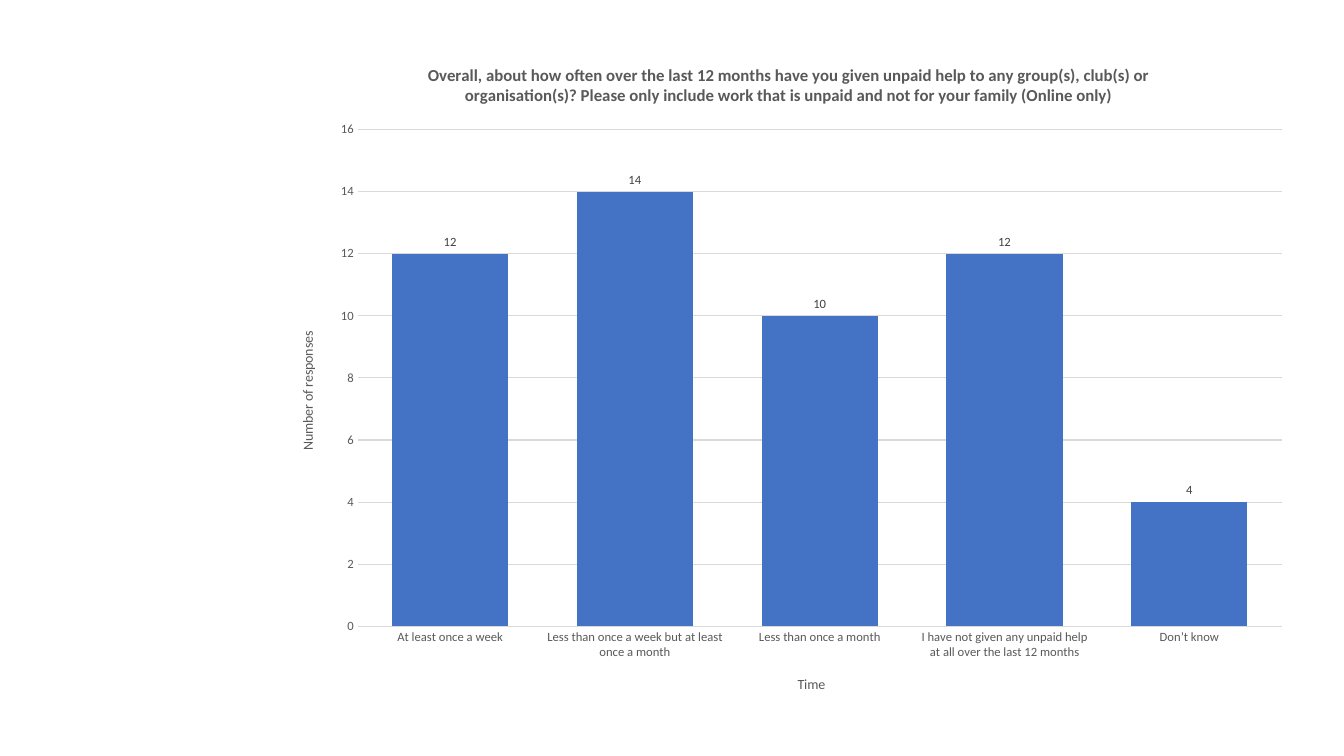
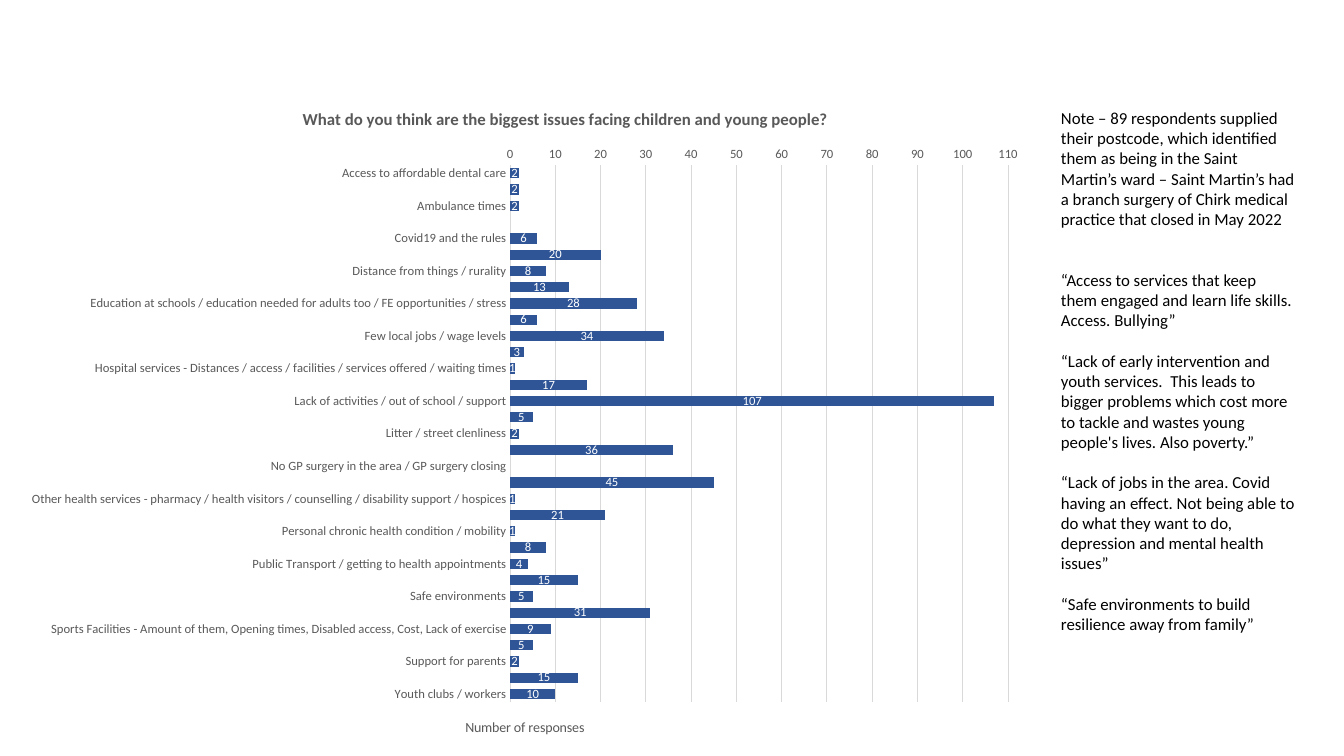
from dataclasses import dataclass

from lxml.etree import SubElement
from pptx import Presentation
from pptx.chart.data import CategoryChartData
from pptx.dml.color import RGBColor
from pptx.enum.chart import XL_CHART_TYPE, XL_LABEL_POSITION, XL_TICK_MARK
from pptx.oxml.ns import qn
from pptx.util import Inches, Pt


@dataclass(frozen=True)
class Theme:
    font: str = "Calibri"
    ink: str = "000000"
    muted: str = "595959"
    grid: str = "D9D9D9"
    column: str = "4472C4"
    column_label: str = "404040"
    bar: str = "2F5597"
    bar_label: str = "FFFFFF"
    title_size: int = 12
    body_size: int = 12
    axis_title_size: int = 10
    tick_size: int = 9
    hairline: float = 0.75
    line_pitch: float = 14.65


CHART_SIZE = (76.4, 88.8)

FREQUENCY_TITLE = (
    "Overall, about how often over the last 12 months have you given unpaid help "
    "to any group(s), club(s) or organisation(s)? Please only include work that is "
    "unpaid and not for your family (Online only)"
)
FREQUENCY = {
    "At least once a week": 12,
    "Less than once a week but at least once a month": 14,
    "Less than once a month": 10,
    "I have not given any unpaid help at all over the last 12 months": 12,
    "Don’t know": 4,
}

ISSUES_TITLE = "What do you think are the biggest issues facing children and young people?"
ISSUES = {
    "Access to affordable dental care": 2,
    "Access to gp for appointments / no face to face / not enough GPs": 2,
    "Ambulance times": 2,
    "Communication between organisations / continuity / cross border": None,
    "Covid19 and the rules": 6,
    "Crime, Antisocial behaviour and Vandalism / Police numbers": 20,
    "Distance from things / rurality": 8,
    "Drugs": 13,
    "Education at schools / education needed for adults too / FE opportunities / stress": 28,
    "Engagement / language": 6,
    "Few local jobs / wage levels": 34,
    "Healthcare in general / in area / funding": 3,
    "Hospital services - Distances / access / facilities / services offered / waiting times": 1,
    "Housing - lack of affordable ones / too many developments": 17,
    "Lack of activities / out of school / support": 107,
    "Lifestyle issues - Diets / Obesity / Amount of takeaways / Smoking / Alcohol": 5,
    "Litter / street clenliness": 2,
    "Mental health / social media pressure / isolation / lonliness / lack of MH services / bullying": 36,
    "No GP surgery in the area / GP surgery closing": None,
    "Nothing / not sure": 45,
    "Other health services - pharmacy / health visitors / counselling / disability support / hospices": 1,
    "People's attitude / parental / personal responsibilities": 21,
    "Personal chronic health condition / mobility": 1,
    "Pollution from local business / traffic": 8,
    "Public Transport / getting to health appointments": 4,
    "Rising costs or living": 15,
    "Safe environments": 5,
    "Screen time - too much / the internet / access / social media": 31,
    "Sports Facilities - Amount of them, Opening times, Disabled access, Cost, Lack of exercise": 9,
    "State of Local Infrastructure now and in future - Cycle routes, Roads, Pavements, "
    "Street lighting and Parks / schools": 5,
    "Support for parents": 2,
    "The Future - worries / prospects": 15,
    "Youth clubs / workers": 10,
}

COMMENTS = [
    (0, "Note – 89 respondents supplied their postcode, which identified them as being in "
        "the Saint Martin’s ward – Saint Martin’s had a branch surgery of Chirk medical "
        "practice that closed in May 2022"),
    (2, "“Access to services that keep them engaged and learn life skills. Access. Bullying”"),
    (1, "“Lack of early intervention and youth services.  This leads to bigger problems which "
        "cost more to tackle and wastes young people's lives. Also poverty.”"),
    (1, "“Lack of jobs in the area. Covid having an effect. Not being able to do what they "
        "want to do, depression and mental health issues”"),
    (1, "“Safe environments to build resilience away from family”"),
]


class SurveyDeck:
    def __init__(self, theme):
        self.theme = theme
        self.deck = Presentation()
        self.deck.slide_width = Inches(13.33)
        self.deck.slide_height = Inches(7.5)
        self.slide = None

    def add_slide(self):
        self.slide = self.deck.slides.add_slide(self.deck.slide_layouts[6])

    def area(self, left, top, width, height):
        across, down = self.deck.slide_width / 100, self.deck.slide_height / 100
        return [int(length) for length in
                (left * across, top * down, width * across, height * down)]

    def style_font(self, font, size, color, bold=False):
        font.name = self.theme.font
        font.size = Pt(size)
        font.bold = bold
        font.color.rgb = RGBColor.from_string(color)

    def style_line(self, line):
        line.color.rgb = RGBColor.from_string(self.theme.grid)
        line.width = Pt(self.theme.hairline)

    def set_title(self, owner, text, size, bold=False):
        frame = owner.text_frame
        frame.text = text
        for span in frame.paragraphs[0].runs:
            self.style_font(span.font, size, self.theme.muted, bold)

    def set_layout(self, element, position, after=None, inner=False):
        for layout in element.findall(qn("c:layout")):
            element.remove(layout)
        layout = SubElement(element, qn("c:layout"))
        element.insert(0 if after is None else element.index(element.find(after)) + 1, layout)
        manual = SubElement(layout, qn("c:manualLayout"))
        settings = [("layoutTarget", "inner")] if inner else []
        settings += [("xMode", "edge"), ("yMode", "edge")]
        settings += zip("xywh", position)
        for name, value in settings:
            SubElement(manual, qn(f"c:{name}")).set("val", str(value))

    def style_axis(self, axis, title=None):
        axis.major_tick_mark = axis.minor_tick_mark = XL_TICK_MARK.NONE
        self.style_font(axis.tick_labels.font, self.theme.tick_size, self.theme.muted)
        if title:
            self.set_title(axis.axis_title, title, self.theme.axis_title_size)

    def add_chart(self, kind, corner, title, answers, color, label_color, scale, plot_area,
                  category_title=None, label_position=None, reverse=False, title_corner=None):
        theme = self.theme
        data = CategoryChartData()
        data.categories = list(answers)
        data.add_series("Series 1", list(answers.values()))
        chart = self.slide.shapes.add_chart(kind, *self.area(*corner, *CHART_SIZE), data).chart
        chart.has_legend = False
        self.style_font(chart.font, theme.axis_title_size, theme.ink)
        self.set_title(chart.chart_title, title, theme.title_size, True)
        if title_corner:
            self.set_layout(chart.chart_title._element, title_corner, qn("c:tx"))
        self.set_layout(chart._chartSpace.chart.plotArea, plot_area, inner=True)

        self.style_axis(chart.category_axis, category_title)
        self.style_line(chart.category_axis.format.line)
        chart.category_axis.reverse_order = reverse
        chart.category_axis.has_major_gridlines = False
        values = chart.value_axis
        self.style_axis(values, "Number of responses")
        values.minimum_scale = 0
        values.maximum_scale, values.major_unit = scale
        values.format.line.fill.background()
        self.style_line(values.major_gridlines.format.line)

        plot = chart.plots[0]
        plot.gap_width = 59
        plot.vary_by_categories = False
        fill = plot.series[0].format.fill
        fill.solid()
        fill.fore_color.rgb = RGBColor.from_string(color)
        labels = plot.series[0].data_labels
        labels.show_value = True
        self.style_font(labels.font, theme.tick_size, label_color)
        if label_position is not None:
            labels.position = label_position

    def add_comments(self, area, comments):
        box = self.slide.shapes.add_textbox(*self.area(*area))
        frame = box.text_frame
        frame.word_wrap = True
        for index, (gap_lines, text) in enumerate(comments):
            para = frame.add_paragraph() if index else frame.paragraphs[0]
            para.text = text
            if gap_lines:
                para.space_before = Pt(gap_lines * self.theme.line_pitch)
            for span in para.runs:
                self.style_font(span.font, self.theme.body_size, self.theme.ink)


def main():
    theme = Theme()
    survey = SurveyDeck(theme)

    survey.add_slide()
    survey.add_chart(
        XL_CHART_TYPE.COLUMN_CLUSTERED, (20.5, 5.6), FREQUENCY_TITLE, FREQUENCY,
        theme.column, theme.column_label, (16, 2), (0.08, 0.13, 0.9, 0.74),
        category_title="Time", label_position=XL_LABEL_POSITION.OUTSIDE_END)

    survey.add_slide()
    survey.add_chart(
        XL_CHART_TYPE.BAR_STACKED, (0.9, 11.2), ISSUES_TITLE, ISSUES,
        theme.bar, theme.bar_label, (110, 10), (0.485, 0.12, 0.485, 0.8),
        reverse=True, title_corner=(0.28, 0.03))
    survey.add_comments((78.2, 13.6, 19, 75.5), COMMENTS)

    survey.deck.save("out.pptx")


if __name__ == "__main__":
    main()
